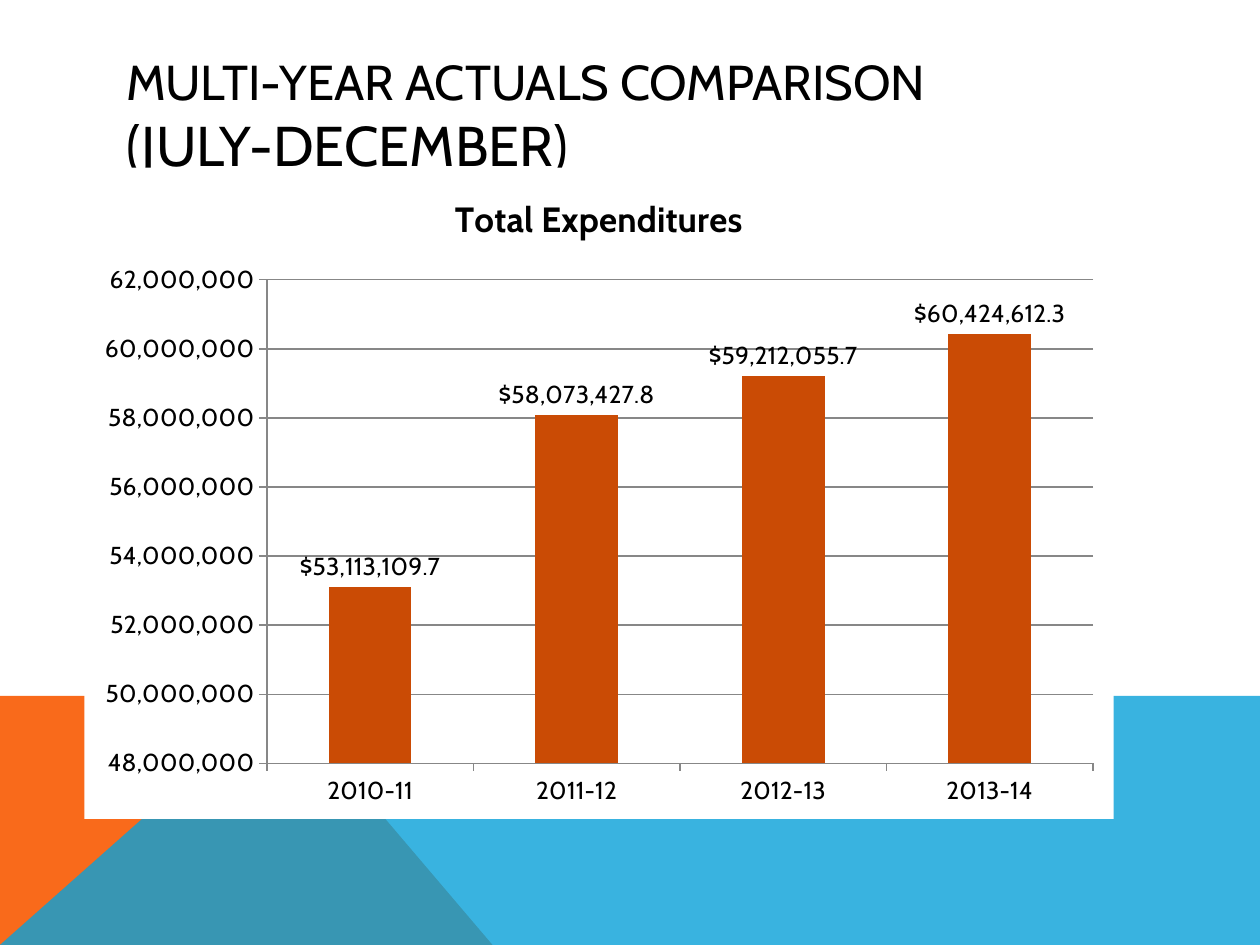
from lxml import etree
from pptx import Presentation
from pptx.chart.data import CategoryChartData
from pptx.dml.color import RGBColor
from pptx.enum.chart import XL_CHART_TYPE, XL_LABEL_POSITION, XL_TICK_MARK
from pptx.enum.text import MSO_ANCHOR, PP_ALIGN
from pptx.oxml import parse_xml
from pptx.oxml.ns import nsdecls, qn
from pptx.util import Cm, Pt

COLUMN = XL_CHART_TYPE.COLUMN_CLUSTERED
OUT_END = XL_LABEL_POSITION.OUTSIDE_END
TICK_OUT, TICK_NONE = XL_TICK_MARK.OUTSIDE, XL_TICK_MARK.NONE
MIDDLE, LEFT = MSO_ANCHOR.MIDDLE, PP_ALIGN.LEFT

FONT = "Cabin"
BLACK, WHITE, GREY = "000000", "FFFFFF", "878787"
ORANGE, BLUE, RUST = "F96A1B", "08A1D9", "CA4B05"
YEARS = ["2010-11", "2011-12", "2012-13", "2013-14"]
COSTS = [53113109.7, 58073427.8, 59212055.7, 60424612.3]


def paint(part, color):
    """Give a fill a solid colour."""
    part.solid()
    part.fore_color.rgb = RGBColor.from_string(color)


def apply(part, values):
    """Set each attribute named in values."""
    for name, value in values.items():
        setattr(part, name, value)


def style(font, size, color=BLACK, bold=False):
    apply(font, {"name": FONT, "size": Pt(size), "bold": bold})
    font.color.rgb = RGBColor.from_string(color)


def add_band(slide, box, points, color, alpha=None):
    """Draw a polygon whose points are relative to the box corner."""
    left, top = box[:2]
    spots = [(Cm(left + x), Cm(top + y)) for x, y in points]
    pen = slide.shapes.build_freeform(*spots[0])
    pen.add_line_segments(spots[1:], close=True)
    band = pen.convert_to_shape()
    band.shadow.inherit = False
    paint(band.fill, color)
    band.line.fill.background()
    if alpha:
        tint = band.fill._xPr.find(".//" + qn("a:srgbClr"))
        etree.SubElement(tint, qn("a:alpha"), val=str(alpha * 1000))


def add_footer(slide, box):
    """Two overlapping bands along the bottom."""
    width, height = box[2:]
    peak, foot = 5.66, 9.93
    add_band(slide, box, [(0, height), (0, 0), (peak, 0), (foot, height)], ORANGE)
    add_band(slide, box, [(0, height), (peak, 0), (width, 0), (width, height)],
             BLUE, alpha=80)


def add_title(slide, box):
    title = slide.shapes.title
    apply(title, dict(zip(("left", "top", "width", "height"), map(Cm, box))))
    frame = title.text_frame
    apply(frame, {"vertical_anchor": MIDDLE, "word_wrap": True})
    para = frame.paragraphs[0]
    para.alignment = LEFT
    first = para.add_run()
    first.text = "MULTI-YEAR ACTUALS COMPARISON"
    style(first.font, 28)
    para.add_line_break()
    second = para.add_run()
    second.text = "(JULY-DECEMBER)"
    style(second.font, 32)


def add_costs(slide, box):
    """Column chart of spending by year."""
    data = CategoryChartData()
    data.categories = YEARS
    data.add_series("Series 1", COSTS)
    chart = slide.shapes.add_chart(COLUMN, *map(Cm, box), data).chart
    style(chart.font, 10)
    chart.has_legend = False

    # Heading
    chart.has_title = True
    head = chart.chart_title.text_frame
    head.text = "Total Expenditures"
    style(head.paragraphs[0].runs[0].font, 20, bold=True)

    # White backdrop
    chart.element.find(qn("c:chart")).addnext(parse_xml(
        f'<c:spPr {nsdecls("c", "a")}><a:solidFill><a:srgbClr val="{WHITE}"/>'
        '</a:solidFill><a:ln><a:noFill/></a:ln></c:spPr>'))

    # Axes
    scale = chart.value_axis
    apply(scale, {"minimum_scale": 48e6, "maximum_scale": 62e6,
                  "major_unit": 2e6, "has_major_gridlines": True})
    apply(scale.tick_labels, {"number_format": "#,##0",
                              "number_format_is_linked": False})
    for axis in (chart.category_axis, scale):
        apply(axis, {"major_tick_mark": TICK_OUT, "minor_tick_mark": TICK_NONE})
        style(axis.tick_labels.font, 14)
    for owner in (chart.category_axis, scale, scale.major_gridlines):
        line = owner.format.line
        line.width = Pt(0.75)
        paint(line.fill, GREY)

    # Columns and their labels
    plot = chart.plots[0]
    apply(plot, {"gap_width": 150, "vary_by_categories": False})
    bars = plot.series[0]
    paint(bars.format.fill, RUST)
    tags = bars.data_labels
    apply(tags, {"show_value": True, "position": OUT_END,
                 "number_format": '"$"#,##0.0',
                 "number_format_is_linked": False})
    style(tags.font, 14)


def main():
    deck = Presentation()
    apply(deck, {"slide_width": Cm(25.4), "slide_height": Cm(19.05)})
    slide = deck.slides.add_slide(deck.slide_layouts[5])
    paint(slide.background.fill, WHITE)
    add_title(slide, (2.29, 1.02, 20.88, 2.59))
    add_footer(slide, (0, 14.03, 25.4, 5.02))
    # The title sits above the bands and below the chart
    title = slide.shapes.title.element
    title.getparent().append(title)
    add_costs(slide, (1.7, 3.38, 20.75, 13.13))
    deck.save("out.pptx")


if __name__ == "__main__":
    main()
